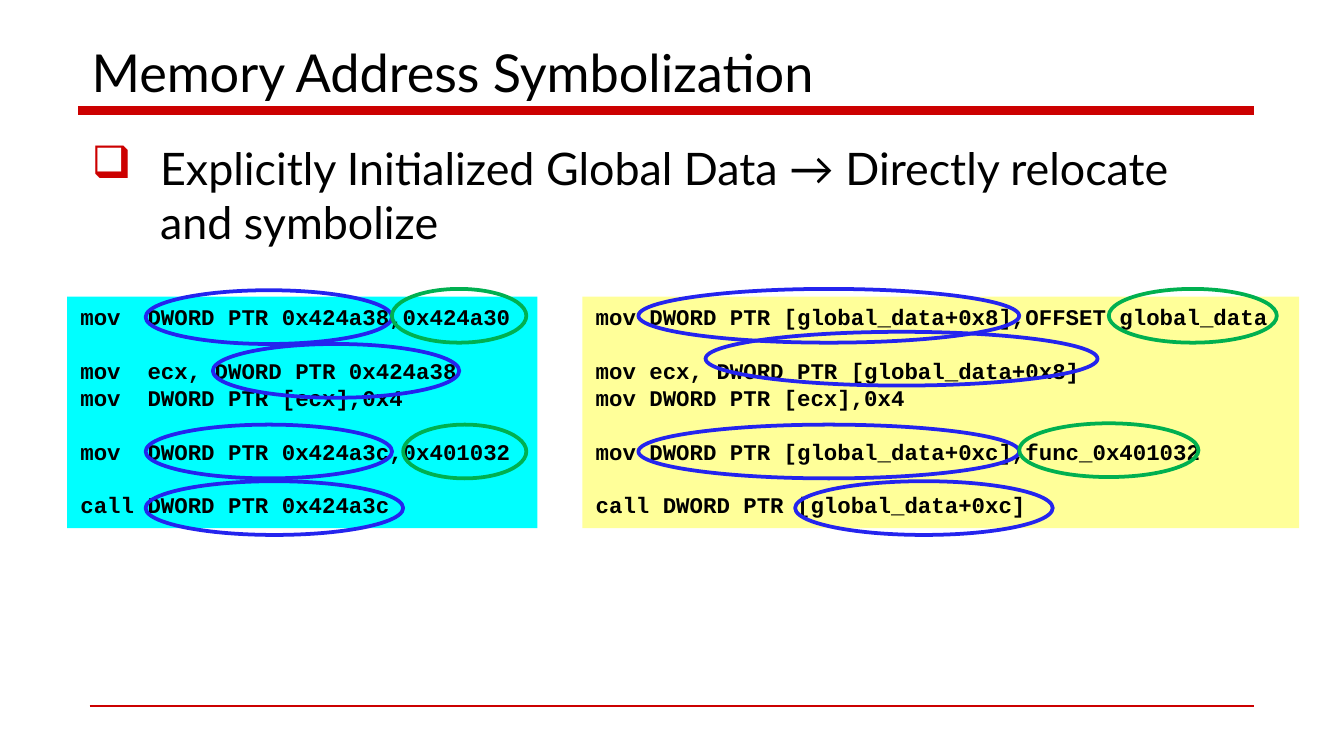
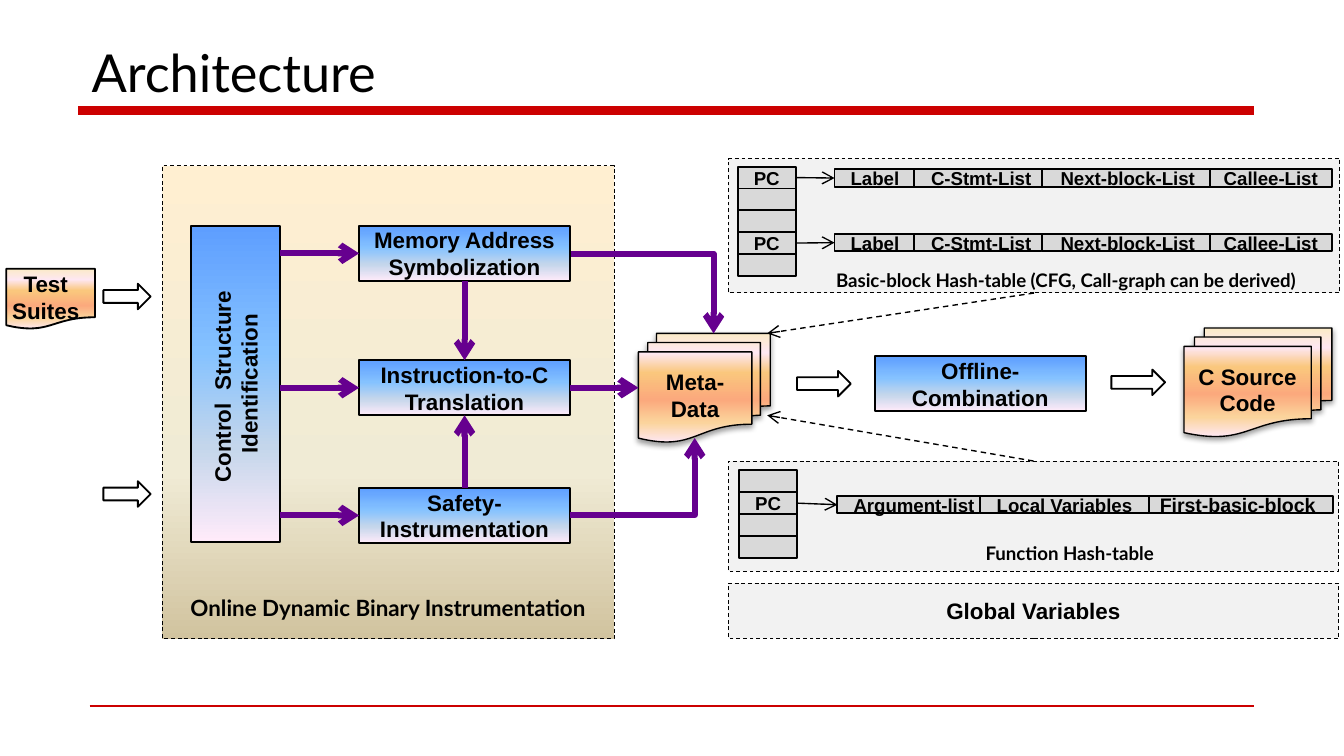
import pptx
import pptx.util
import pptx.dml.color
import pptx.enum.dml
import pptx.enum.shapes
import pptx.enum.text
import pptx.oxml
from pptx.oxml.ns import nsdecls, qn

Pt = pptx.util.Pt
SHAPE = pptx.enum.shapes.MSO_SHAPE
LINK = pptx.enum.shapes.MSO_CONNECTOR
ANCHOR = pptx.enum.text.MSO_ANCHOR
ALIGN = pptx.enum.text.PP_ALIGN
TOP, LEFT, BOTTOM, RIGHT = range(4)

RED, BLUE, GREEN, PURPLE, BLACK = "CC0000", "2424EE", "00B050", "66008F", "000000"
CELL, PANEL = "D9D9D9", "F2F2F2"
SKY = [(0, "5E9EFF"), (40, "85C2FF"), (70, "C4D6EB"), (100, "FFEBFA")]
SAND = [(0, "FFEFD1"), (65, "F0EBD5"), (100, "D1C39F")]
PEACH = [(0, "FBEAC7"), (18, "FEE7F2"), (36, "FAC77D"),
         (61, "FBA97D"), (82, "FBD49C"), (100, "FEE7F2")]

# Memory address symbolization: an empty string is a skipped line
BULLET = "Explicitly Initialized Global Data → Directly relocate and symbolize"
CODE = [
    ((312, 159, 384, 124), "FFFF99", [
        "mov DWORD PTR [global_data+0x8],OFFSET global_data", "",
        "mov ecx, DWORD PTR [global_data+0x8]",
        "mov DWORD PTR [ecx],0x4", "",
        "mov DWORD PTR [global_data+0xc],func_0x401032", "",
        "call DWORD PTR [global_data+0xc]"]),
    ((36, 159, 252, 124), "00FFFF", [
        "mov  DWORD PTR 0x424a38,0x424a30", "",
        "mov  ecx, DWORD PTR 0x424a38",
        "mov  DWORD PTR [ecx],0x4", "",
        "mov  DWORD PTR 0x424a3c,0x401032", "",
        "call DWORD PTR 0x424a3c"]),
]
RING_H = 28.8
RINGS = {  # left, top, width
    BLUE: [(78, 155.5, 132), (342, 154.8, 204), (114, 184.3, 132), (378, 177.8, 210),
           (78, 227.5, 132), (342, 227.5, 204), (78, 257.8, 138), (426, 257.8, 138)],
    GREEN: [(210, 154.8, 72), (594, 154.8, 90), (216, 227.5, 66), (546, 226.8, 96)],
}

# Architecture
STEP_X, STEP_W, STEP_H = 192.4, 113, 29.5
STEPS = [("Memory Address Symbolization", 121),
         ("Instruction-to-C Translation", 193),
         ("Safety-Instrumentation", 261.4)]
DOCUMENTS = [("C Source Code", (634.3, 175.7, 79.2, 58.3)),
             ("Meta-Data", (342, 178.6, 70.6, 58.3))]
BLOCK_ARROWS = [(55.4, 152, 25.3), (55.4, 257.8, 25.3), (427, 198.7, 28.8), (595.4, 198, 28.8)]
ELBOWS = [((306, 136), (382.3, 178.6)), ((305.3, 275.8), (372.2, 234.7))]
PC_W, PC_H, FIELD_H = 31, 11.7, 9.4
BLOCK_FIELDS = [("Label", 447.1, 43.2, 10), ("C-Stmt-List", 489.6, 72, 10),
                ("Next-block-List", 558, 92.2, 10), ("Callee-List", 648, 65.5, 10)]
FUNCTION_FIELDS = [("Argument-list", 448.6, 82, 10), ("First-basic-block", 612, 102.2, 10.5),
                   ("Local Variables", 524.9, 90.7, 10)]
HASH_TABLES = [
    dict(panel=(390.2, 85, 327.6, 72), column=(395.3, 89.3), slots=5,
         rows={0: 90.7, 3: 125.3}, fields=BLOCK_FIELDS,
         caption="Basic-block Hash-table (CFG, Call-graph can be derived)",
         caption_box=(424, 140.4, 294, 19.4), link=(BOTTOM, (411, 178.6))),
    dict(panel=(390.2, 247, 327, 59), column=(396, 252), slots=4,
         rows={1: 265.7}, fields=FUNCTION_FIELDS,
         caption="Function Hash-table",
         caption_box=(510, 286.6, 126, 19.4), link=(TOP, (411, 222.5))),
]


def rgb(hex_text):
    return pptx.dml.color.RGBColor.from_string(hex_text)


def pts(values):
    return [Pt(v) for v in values]


def xml(tag, body="", **attrs):
    """Make one DrawingML element."""
    words = "".join(f' {k}="{v}"' for k, v in attrs.items())
    return pptx.oxml.parse_xml(f"<a:{tag} {nsdecls('a')}{words}>{body}</a:{tag}>")


def stroke(line, color, width, dashed=False):
    line.color.rgb = rgb(color)
    line.width = Pt(width)
    if dashed:
        line.dash_style = pptx.enum.dml.MSO_LINE.DASH


def write(sp, lines, size=12, font="Arial", bold=True, align=ALIGN.CENTER,
          anchor=ANCHOR.MIDDLE, inset=(7.2, 3.6), pitch=None):
    """Write one paragraph a line; an empty line becomes space before the next."""
    tf = sp.text_frame
    tf.word_wrap = True
    tf.vertical_anchor = anchor
    tf.margin_left = tf.margin_right = Pt(inset[0])
    tf.margin_top = tf.margin_bottom = Pt(inset[1])
    tf.text = "\n".join(t for t in lines if t)
    after_gap = [i > 0 and not lines[i - 1] for i, t in enumerate(lines) if t]
    for p, gap in zip(tf.paragraphs, after_gap):
        p.alignment = align
        if pitch:
            p.line_spacing = Pt(pitch)
        if gap:
            p.space_before = Pt(pitch)
        for r in p.runs:
            r.font.name, r.font.size, r.font.bold = font, Pt(size), bold
            r.font.color.rgb = rgb(BLACK)
    return tf


def shape(s, kind, box, fill=None, line=None, width=1, dashed=False):
    """Add a preset shape; fill is a colour, a list of gradient stops or None."""
    sp = s.shapes.add_shape(kind, *pts(box))
    sp.shadow.inherit = False
    if isinstance(fill, list):
        stops = "".join(f'<a:gs pos="{pos * 1000}"><a:srgbClr val="{color}"/></a:gs>'
                        for pos, color in fill)
        sp._element.spPr.find(qn("a:prstGeom")).addnext(
            xml("gradFill", f'<a:gsLst>{stops}</a:gsLst><a:lin ang="5400000" scaled="0"/>',
                rotWithShape=1))
    elif fill:
        sp.fill.solid()
        sp.fill.fore_color.rgb = rgb(fill)
    else:
        sp.fill.background()
    if line:
        stroke(sp.line, line, width, dashed)
    else:
        sp.line.fill.background()
    return sp


def text_box(s, box, lines, **style):
    sp = s.shapes.add_textbox(*pts(box))
    return write(sp, lines, **style)


def connect(s, start, stop, color, width, dashed=False, head=True, elbow=False):
    """Draw a line; each end is a point or a (shape, site) pair."""
    joins = [not isinstance(end[0], (int, float)) for end in (start, stop)]
    ends = [(0, 0) if joined else end for joined, end in zip(joins, (start, stop))]
    c = s.shapes.add_connector(LINK.ELBOW if elbow else LINK.STRAIGHT, *pts(ends[0] + ends[1]))
    if joins[0]:
        c.begin_connect(*start)
    if joins[1]:
        c.end_connect(*stop)
    stroke(c.line, color, width, dashed)
    spPr = c._element.spPr
    if elbow:
        spPr.find(qn("a:prstGeom")).set("prst", "bentConnector2")
    if head:
        spPr.find(qn("a:ln")).append(xml("tailEnd", type="arrow"))
    spPr.append(xml("effectLst"))


def new_slide(prs, title):
    s = prs.slides.add_slide(prs.slide_layouts[6])
    connect(s, (48, 378), (672, 378), RED, 1, head=False)
    connect(s, (42, 59.2), (672, 59.2), RED, 4.5, head=False)
    text_box(s, (42, 9, 630, 49.5), [title], size=28, font="Lato", bold=False,
             align=ALIGN.LEFT, anchor=ANCHOR.BOTTOM)
    return s


def symbolization_slide(prs):
    s = new_slide(prs, "Memory Address Symbolization")
    tf = text_box(s, (42, 72, 630, 292), [BULLET], size=24, font="Lato", bold=False,
                  align=ALIGN.LEFT, anchor=ANCHOR.TOP)
    p = tf.paragraphs[0]
    p.space_before = Pt(4.8)
    pPr = p._p.get_or_add_pPr()
    pPr.set("marL", str(Pt(36.7)))
    pPr.set("indent", str(-Pt(36.7)))
    pPr.append(xml("buClr", f'<a:srgbClr val="{RED}"/>'))
    pPr.append(xml("buChar", char="❑"))

    for box, fill, lines in CODE:
        write(shape(s, SHAPE.RECTANGLE, box, fill), lines, font="Courier New",
              align=ALIGN.LEFT, anchor=ANCHOR.TOP, pitch=14.4)
    for color, rings in RINGS.items():
        for x, y, w in rings:
            shape(s, SHAPE.OVAL, (x, y, w, RING_H), line=color, width=2)


def hash_table(s, table):
    panel = shape(s, SHAPE.RECTANGLE, table["panel"], PANEL, BLACK, 0.5, True)
    x, y = table["column"]
    for i in range(table["slots"]):
        slot = shape(s, SHAPE.RECTANGLE, (x, y + i * PC_H, PC_W, PC_H), CELL, BLACK)
        if i not in table["rows"]:
            continue
        write(slot, ["PC"], size=10, inset=(0, 0))
        cells = []
        for name, left, width, size in table["fields"]:
            cell = shape(s, SHAPE.RECTANGLE, (left, table["rows"][i], width, FIELD_H), CELL, BLACK)
            write(cell, [name], size=size, inset=(0, 0))
            cells.append(cell)
        connect(s, (slot, RIGHT), (cells[0], LEFT), BLACK, 0.75)
    text_box(s, table["caption_box"], [table["caption"]], size=10, font="Lato",
             anchor=ANCHOR.TOP)
    site, target = table["link"]
    connect(s, (panel, site), target, BLACK, 0.75, dashed=True)


def architecture_slide(prs):
    s = new_slide(prs, "Architecture")
    shape(s, SHAPE.RECTANGLE, (87, 88.8, 242, 253.4), SAND, BLACK, 0.5, True)
    text_box(s, (80, 314.6, 256, 21.6), ["Online Dynamic Binary Instrumentation"],
             font="Lato", anchor=ANCHOR.TOP)
    shape(s, SHAPE.FLOWCHART_DOCUMENT, (3.4, 144, 47.5, 32.4), PEACH, BLACK)
    text_box(s, (0, 145, 49, 28), ["Test", "Suites"], inset=(0, 0), pitch=14.4)
    for x, y, w in BLOCK_ARROWS:
        shape(s, SHAPE.RIGHT_ARROW, (x, y, w, 13.7), line=BLACK)

    control = shape(s, SHAPE.RECTANGLE, (102.2, 121, 47.8, 169.2), SKY, BLACK)
    tf = write(control, ["Control  Structure  Identification"], pitch=14.4)
    tf._txBody.bodyPr.set("vert", "vert270")
    offline = shape(s, SHAPE.RECTANGLE, (468.7, 190.8, STEP_W, STEP_H), SKY, BLACK)
    write(offline, ["Offline-Combination"], pitch=14.4)

    for name, box in DOCUMENTS:
        sp = shape(s, SHAPE.FLOWCHART_MULTIDOCUMENT, box, PEACH, BLACK, 0.75)
        write(sp, [name], pitch=14.4)
        sp._element.spPr.find(qn("a:effectLst")).append(
            xml("outerShdw", f'<a:srgbClr val="{BLACK}"><a:alpha val="38000"/></a:srgbClr>',
                blurRad=Pt(3.1), dist=Pt(1.6), dir=5400000, rotWithShape=0))

    steps = []
    for name, y in STEPS:
        step = shape(s, SHAPE.RECTANGLE, (STEP_X, y, STEP_W, STEP_H), SKY, BLACK)
        write(step, [name], pitch=14.4)
        connect(s, (150, y + STEP_H / 2), (step, LEFT), PURPLE, 3.25)
        steps.append(step)
    memory, translation, safety = steps
    connect(s, (memory, BOTTOM), (translation, TOP), PURPLE, 3.25)
    connect(s, (safety, TOP), (translation, BOTTOM), PURPLE, 3.25)
    connect(s, (translation, RIGHT), (342, 207.75), PURPLE, 3.25)
    for start, stop in ELBOWS:
        connect(s, start, stop, PURPLE, 3.25, elbow=True)

    for table in HASH_TABLES:
        hash_table(s, table)
    variables = shape(s, SHAPE.RECTANGLE, (390.2, 312.5, 327, STEP_H), PANEL, BLACK, 0.5, True)
    write(variables, ["Global Variables"])


def main():
    prs = pptx.Presentation()
    prs.slide_width, prs.slide_height = Pt(720), Pt(405)
    symbolization_slide(prs)
    architecture_slide(prs)
    prs.save("out.pptx")


if __name__ == "__main__":
    main()
